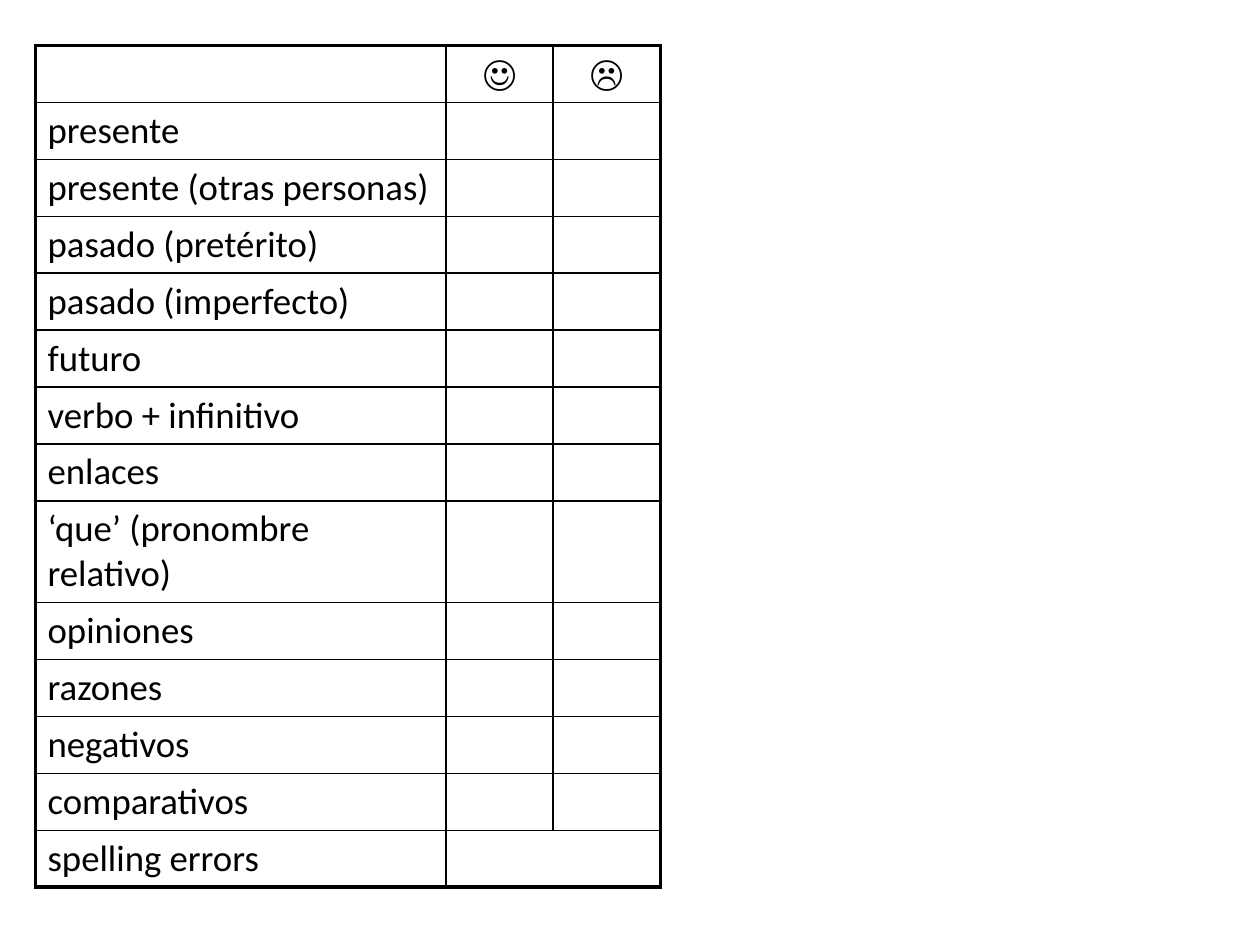
import dataclasses

import pptx
import pptx.dml.color
import pptx.enum.text
import pptx.oxml
import pptx.oxml.ns
import pptx.util

Cm = pptx.util.Cm
Pt = pptx.util.Pt


@dataclasses.dataclass(frozen=True)
class Theme:
    ink: str = "000000"
    font: str = "Calibri"
    text_size: float = 21
    inner_line: float = 1
    outer_line: float = 2.25


THEME = Theme()
MARKS = ("☺", "☹")
TOPICS = (
    "presente",
    "presente (otras personas)",
    "pasado (pretérito)",
    "pasado (imperfecto)",
    "futuro",
    "verbo + infinitivo",
    "enlaces",
    "‘que’ (pronombre relativo)",
    "opiniones",
    "razones",
    "negativos",
    "comparativos",
    "spelling errors",
)
TALL_TOPIC = "‘que’ (pronombre relativo)"


def set_borders(cell, outer_sides):
    properties = cell._tc.get_or_add_tcPr()
    for side in "LRTB":
        points = THEME.outer_line if side in outer_sides else THEME.inner_line
        properties.append(pptx.oxml.parse_xml(
            f'<a:ln{side} {pptx.oxml.ns.nsdecls("a")} w="{int(Pt(points))}">'
            f'<a:solidFill><a:srgbClr val="{THEME.ink}"/></a:solidFill></a:ln{side}>'
        ))


def write(cell, text, alignment):
    paragraph = cell.text_frame.paragraphs[0]
    paragraph.alignment = alignment
    run = paragraph.add_run()
    run.text = text
    run.font.name = THEME.font
    run.font.size = Pt(THEME.text_size)
    run.font.color.rgb = pptx.dml.color.RGBColor.from_string(THEME.ink)


def add_checklist(slide, left, top, width, height):
    row_count, column_count = len(TOPICS) + 1, len(MARKS) + 1
    checklist = slide.shapes.add_table(
        row_count, column_count, left, top, width, height).table
    checklist.first_row = False
    checklist.horz_banding = False

    mark_width = Cm(2.16)
    checklist.columns[0].width = width - len(MARKS) * mark_width
    for column in range(1, column_count):
        checklist.columns[column].width = mark_width

    tall_height = Cm(2.04)
    row_height = (height - tall_height) // len(TOPICS)
    for row, topic in enumerate(("",) + TOPICS):
        checklist.rows[row].height = tall_height if topic == TALL_TOPIC else row_height

    last_row, last_column = row_count - 1, column_count - 1
    for row in range(row_count):
        for column in range(column_count):
            cell = checklist.cell(row, column)
            cell.margin_left = cell.margin_right = Cm(0.25)
            cell.margin_top = cell.margin_bottom = Cm(0.12)
            edges = (("L", column == 0), ("R", column == last_column),
                     ("T", row == 0), ("B", row == last_row))
            if (row, column) == (last_row, 1):
                edges += (("R", True),)
            set_borders(cell, [side for side, is_outer in edges if is_outer])
            cell.fill.background()

    checklist.cell(last_row, 1).merge(checklist.cell(last_row, last_column))

    for column, mark in enumerate(MARKS, 1):
        write(checklist.cell(0, column), mark, pptx.enum.text.PP_ALIGN.CENTER)
    for row, topic in enumerate(TOPICS, 1):
        write(checklist.cell(row, 0), topic, pptx.enum.text.PP_ALIGN.LEFT)


def main():
    presentation = pptx.Presentation()
    presentation.slide_width = Cm(25.4)
    presentation.slide_height = Cm(19.05)
    slide = presentation.slides.add_slide(presentation.slide_layouts[6])
    add_checklist(slide, Cm(0.71), Cm(0.92), Cm(12.6), Cm(16.89))
    presentation.save("out.pptx")


if __name__ == "__main__":
    main()
